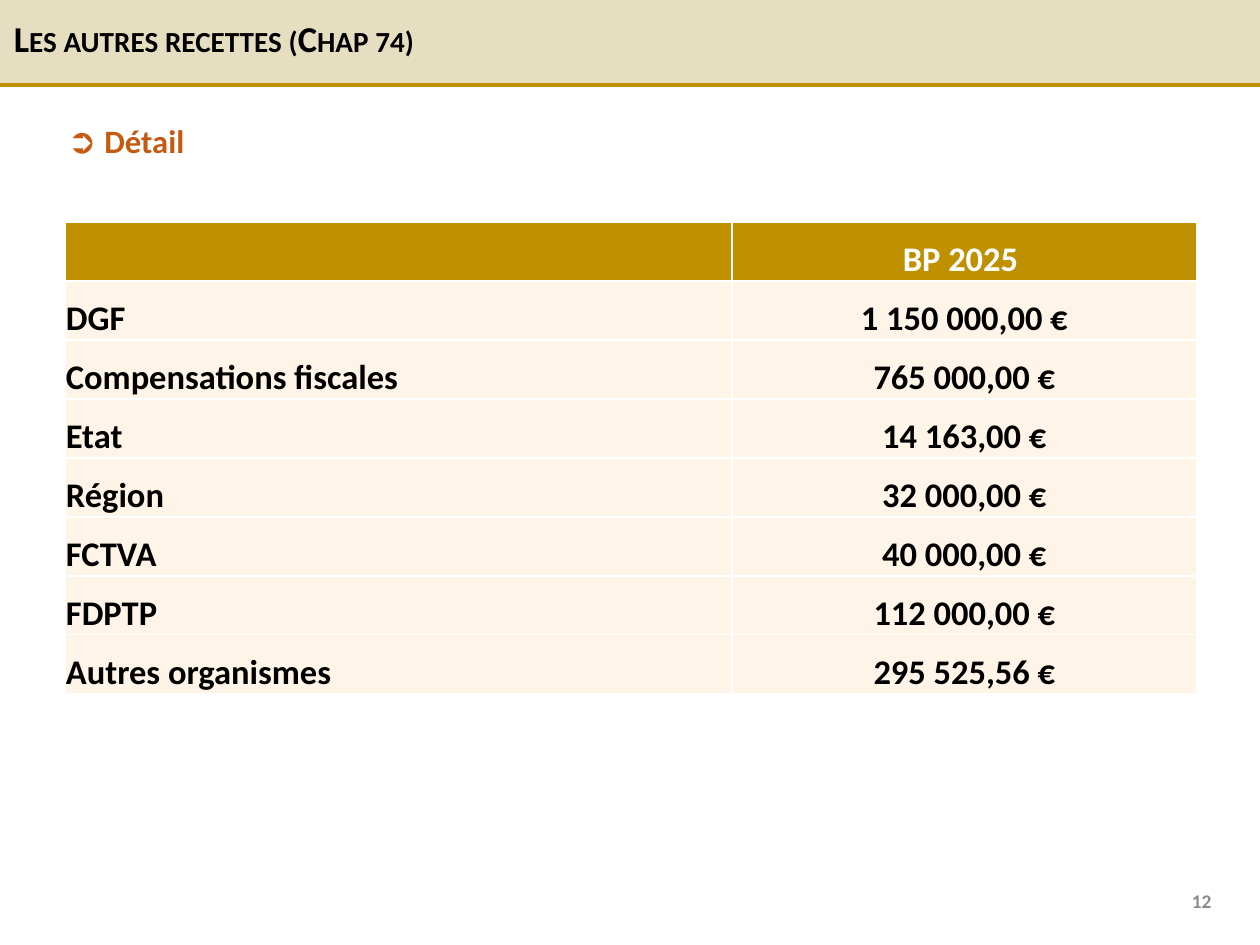
from lxml import etree
from pptx import Presentation, util as u
from pptx.dml.color import RGBColor
from pptx.enum import shapes, text
from pptx.oxml.ns import qn

# Content
TITLE = "Les autres recettes (Chap 74)"
SUBTITLE = [("➲ ", 18), ("Détail", 17)]
PAGE_NUMBER = "12"
ROWS = [
    ("", "BP 2025 "),
    ("DGF", "1 150 000,00 €"),
    ("Compensations fiscales", "765 000,00 €"),
    ("Etat", "14 163,00 €"),
    ("Région", "32 000,00 €"),
    ("FCTVA", "40 000,00 €"),
    ("FDPTP", "112 000,00 €"),
    ("Autres organismes", "295 525,56 €"),
]

# Measures in px, colours
SCALE = 914400 / 138
WIDTH, HEIGHT = 1260, 945
COLUMNS = (667, 465)
ROW_HEIGHT = 59
FONT = "Calibri"
GOLD, SAND, CREAM, ORANGE = "BF9000", "E5DEC1", "FFF4E7", "C55A11"
BLACK, WHITE, GREY = "000000", "FFFFFF", "8C8C8C"


def px(length):
    return u.Emu(round(length * SCALE))


def box(*lengths):
    return [px(length) for length in lengths]


def color(value):
    return RGBColor.from_string(value)


def fill(target, value):
    target.fill.solid()
    target.fill.fore_color.rgb = color(value)


def add_run(paragraph, words, size, value):
    run = paragraph.add_run()
    run.text = words
    run.font.name, run.font.size, run.font.bold = FONT, u.Pt(size), True
    run.font.color.rgb = color(value)
    return run


def add_borders(cell, value, points):
    properties = cell._tc.get_or_add_tcPr()
    for side in ("lnL", "lnR", "lnT", "lnB"):
        line = etree.SubElement(properties, qn("a:" + side), w=str(u.Pt(points)))
        solid = etree.SubElement(line, qn("a:solidFill"))
        etree.SubElement(solid, qn("a:srgbClr"), val=value)


presentation = Presentation()
presentation.slide_width, presentation.slide_height = box(WIDTH, HEIGHT)
slide = presentation.slides.add_slide(presentation.slide_layouts[5])

# Title band
title = slide.shapes.title
title.left, title.top, title.width, title.height = box(0, -3, WIDTH, 88)
fill(title, SAND)
frame = title.text_frame
frame.auto_size = text.MSO_AUTO_SIZE.NONE
frame.vertical_anchor = text.MSO_ANCHOR.MIDDLE
paragraph = frame.paragraphs[0]
paragraph.alignment = text.PP_ALIGN.LEFT
paragraph.line_spacing = 0.9
run = add_run(paragraph, TITLE, 19, BLACK)
run.font._element.set("cap", "small")

# Rule under the title
rule = slide.shapes.add_connector(shapes.MSO_CONNECTOR.STRAIGHT, *box(0, 85, WIDTH, 85))
rule.line.color.rgb = color(GOLD)
rule.line.width = u.Pt(2.25)
etree.SubElement(rule._element.spPr, qn("a:effectLst"))

# Subtitle
subtitle = slide.shapes.add_textbox(*box(54, 112, 1056, 55))
subtitle.text_frame.word_wrap = True
for words, size in SUBTITLE:
    add_run(subtitle.text_frame.paragraphs[0], words, size, ORANGE)

# Revenue table
table = slide.shapes.add_table(
    len(ROWS), len(COLUMNS), *box(65, 222, sum(COLUMNS), ROW_HEIGHT * len(ROWS))
).table
for column, width in zip(table.columns, COLUMNS):
    column.width = px(width)
for row_index, row in enumerate(ROWS):
    table.rows[row_index].height = px(ROW_HEIGHT)
    header = row_index == 0
    for column_index, words in enumerate(row):
        cell = table.cell(row_index, column_index)
        add_borders(cell, WHITE, 1)
        fill(cell, GOLD if header else CREAM)
        cell.margin_left = cell.margin_right = cell.margin_top = px(1)
        cell.margin_bottom = 0
        cell.vertical_anchor = text.MSO_ANCHOR.BOTTOM
        paragraph = cell.text_frame.paragraphs[0]
        paragraph.alignment = text.PP_ALIGN.CENTER if column_index else text.PP_ALIGN.LEFT
        if words:
            add_run(paragraph, words, 18, WHITE if header else BLACK)

# Page number
number = slide.shapes.add_textbox(*box(893, 876, 332, 50))
number.text_frame.word_wrap = True
number.text_frame.vertical_anchor = text.MSO_ANCHOR.MIDDLE
paragraph = number.text_frame.paragraphs[0]
paragraph.alignment = text.PP_ALIGN.RIGHT
add_run(paragraph, PAGE_NUMBER, 10.1, GREY)

presentation.save("out.pptx")
